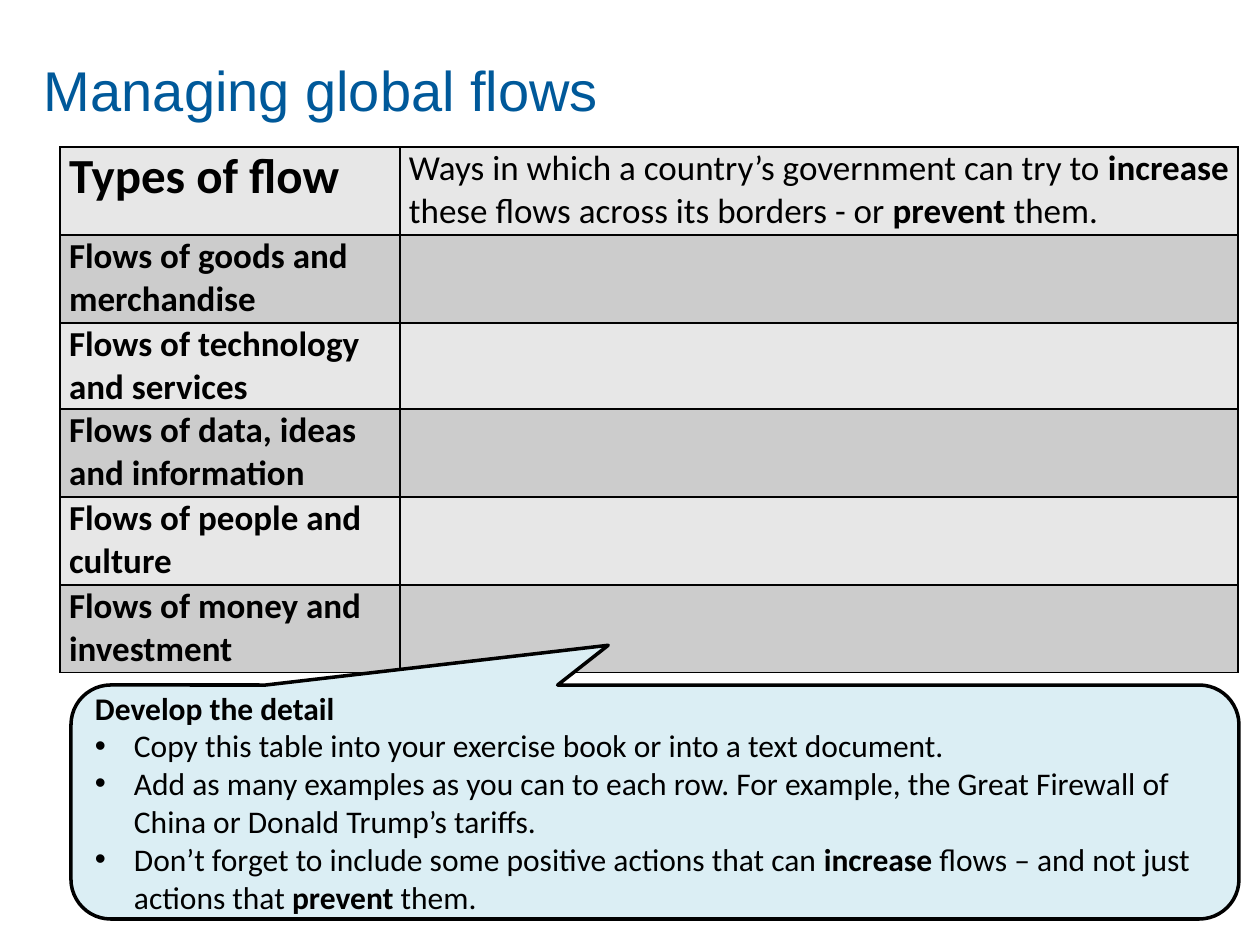
from dataclasses import dataclass

from lxml.etree import SubElement
from pptx import Presentation
from pptx.dml.color import RGBColor
from pptx.enum.shapes import MSO_SHAPE
from pptx.enum.text import MSO_ANCHOR, PP_ALIGN
from pptx.oxml.ns import qn
from pptx.util import Emu, Pt

EMU_PER_PIXEL = 914400 / 126


def px(length):
    return Emu(round(length * EMU_PER_PIXEL))


@dataclass(frozen=True)
class Theme:
    title_font: str = "Arial"
    body_font: str = "Calibri"
    title_color: str = "00599A"
    ink: str = "000000"
    bands: tuple = ("E7E7E7", "CCCCCC")
    callout_fill: str = "DBEEF4"
    title_size: int = 32
    heading_size: int = 28
    cell_size: int = 20
    callout_size: int = 18
    border_width: int = 1
    callout_line: int = 2


class SlideBuilder:
    """Draws themed elements on the current slide."""

    def __init__(self, slide, theme):
        self.slide = slide
        self.theme = theme

    def fill_para(self, para, text, size, font=None, color=None):
        para.alignment = PP_ALIGN.LEFT
        para.font.name = font or self.theme.body_font
        para.font.size = Pt(size)
        para.font.color.rgb = RGBColor.from_string(color or self.theme.ink)
        parts = text.split("**")
        for index, part in enumerate(parts):
            if part:
                span = para.add_run()
                span.text = part
                if len(parts) > 1:
                    span.font.bold = index % 2 == 1

    def title(self, text, left, top, width, height, top_inset):
        frame = self.slide.shapes.add_textbox(
            px(left), px(top), px(width), px(height)).text_frame
        frame.word_wrap = True
        frame.margin_left = frame.margin_right = frame.margin_bottom = 0
        frame.margin_top = px(top_inset)
        self.fill_para(frame.paragraphs[0], text, self.theme.title_size,
                       self.theme.title_font, self.theme.title_color)

    def border(self, cell):
        properties = cell._tc.get_or_add_tcPr()
        for side in ("lnL", "lnR", "lnT", "lnB"):
            line = SubElement(properties, qn(f"a:{side}"),
                              w=str(Pt(self.theme.border_width)))
            fill = SubElement(line, qn("a:solidFill"))
            SubElement(fill, qn("a:srgbClr"), val=self.theme.ink)

    def table(self, rows, left, top, widths, heights):
        table = self.slide.shapes.add_table(
            len(rows), len(widths), px(left), px(top),
            px(sum(widths)), px(sum(heights))).table
        table.first_row = table.horz_banding = False
        for column, width in zip(table.columns, widths):
            column.width = px(width)
        for index, (row, height) in enumerate(zip(table.rows, heights)):
            row.height = px(height)
            for cell, (text, size) in zip(row.cells, rows[index]):
                self.border(cell)
                cell.fill.solid()
                band = self.theme.bands[index % 2]
                cell.fill.fore_color.rgb = RGBColor.from_string(band)
                cell.margin_left = cell.margin_right = px(9)
                cell.margin_top = cell.margin_bottom = 0
                self.fill_para(cell.text_frame.paragraphs[0], text, size)

    def bullet(self, para, indent):
        properties = para._p.get_or_add_pPr()
        properties.set("marL", str(px(indent)))
        properties.set("indent", str(-px(indent)))
        SubElement(properties, qn("a:buFont"), typeface="Arial")
        SubElement(properties, qn("a:buChar"), char="•")

    def callout(self, heading, items, left, top, width, height, adjustments):
        box = self.slide.shapes.add_shape(
            MSO_SHAPE.ROUNDED_RECTANGULAR_CALLOUT,
            px(left), px(top), px(width), px(height))
        box.shadow.inherit = False
        for index, value in enumerate(adjustments):
            box.adjustments[index] = value
        box.fill.solid()
        box.fill.fore_color.rgb = RGBColor.from_string(self.theme.callout_fill)
        box.line.color.rgb = RGBColor.from_string(self.theme.ink)
        box.line.width = Pt(self.theme.callout_line)
        frame = box.text_frame
        frame.word_wrap = True
        frame.vertical_anchor = MSO_ANCHOR.MIDDLE
        self.fill_para(frame.paragraphs[0], heading, self.theme.callout_size)
        for item in items:
            para = frame.add_paragraph()
            self.bullet(para, 39)
            self.fill_para(para, item, self.theme.callout_size)


def main():
    theme = Theme()
    deck = Presentation()
    deck.slide_width, deck.slide_height = px(1260), px(945)
    page = SlideBuilder(deck.slides.add_slide(deck.slide_layouts[6]), theme)

    page.title("Managing global flows", 44, 38, 767, 164, top_inset=18)

    flows = ("goods and merchandise", "technology and services",
             "data, ideas and information", "people and culture",
             "money and investment")
    header = [("**Types of flow**", theme.heading_size),
              ("Ways in which a country’s government can try to **increase** "
               "these flows across its borders - or **prevent** them.",
               theme.cell_size)]
    rows = [header] + [[(f"**Flows of {flow}**", theme.cell_size),
                        ("", theme.cell_size)] for flow in flows]
    page.table(rows, 60, 147, (340, 838), (88, 88, 86, 88, 88, 88))

    page.callout(
        "**Develop the detail**",
        ("Copy this table into your exercise book or into a text document.",
         "Add as many examples as you can to each row. For example, the Great "
         "Firewall of China or Donald Trump’s tariffs.",
         "Don’t forget to include some positive actions that can **increase** "
         "flows – and not just actions that **prevent** them."),
        71, 685, 1168, 234, (-0.04, -0.67, 0.17))

    deck.save("out.pptx")


if __name__ == "__main__":
    main()
